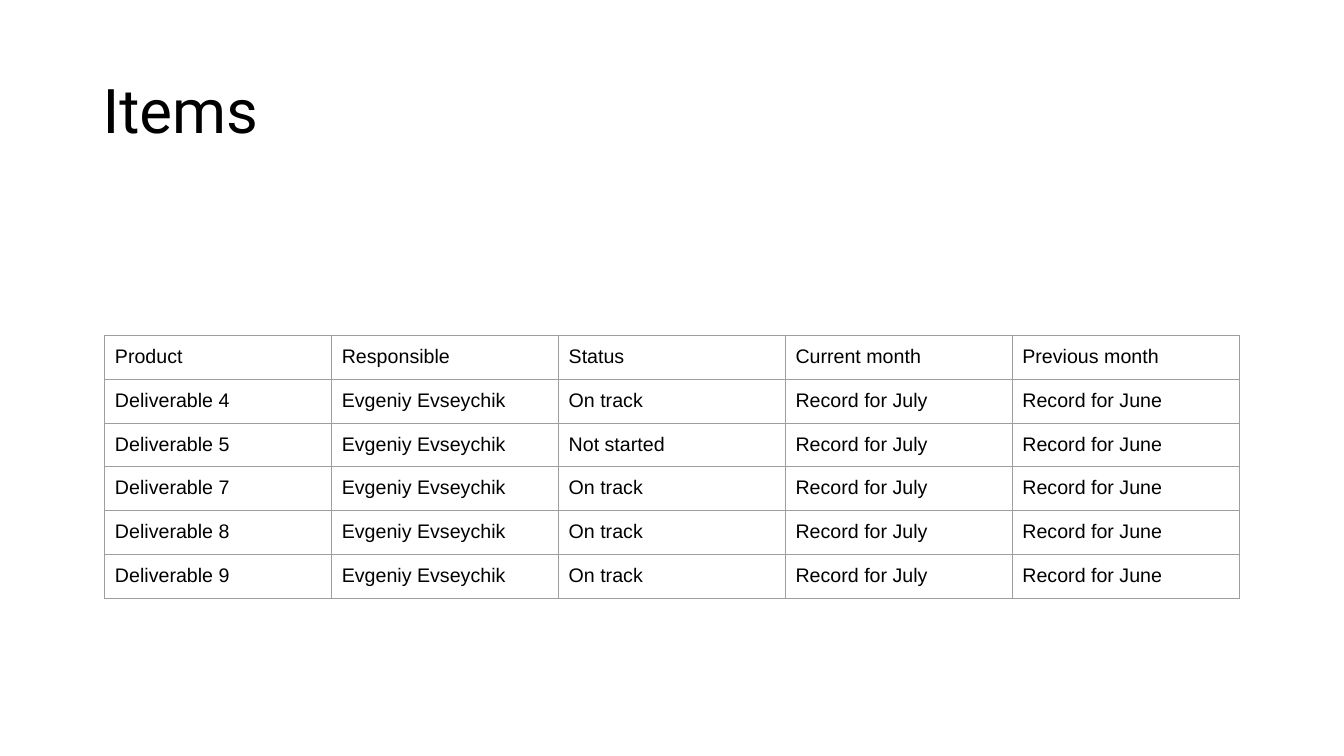
from lxml import etree
from pptx import Presentation
from pptx import util as u
from pptx.dml.color import RGBColor
from pptx.enum import text
from pptx.oxml.ns import qn

# Content
TITLE = "Items"
HEAD = ["Product", "Responsible", "Status", "Current month", "Previous month"]
OWNER = "Evgeniy Evseychik"
MONTHS = ["Record for July", "Record for June"]
ITEMS = [
    ("Deliverable 4", "On track"),
    ("Deliverable 5", "Not started"),
    ("Deliverable 7", "On track"),
    ("Deliverable 8", "On track"),
    ("Deliverable 9", "On track"),
]
ROWS = [HEAD] + [[name, OWNER, state] + MONTHS for name, state in ITEMS]

# Layout in inches, colours in hex
WIDE, HIGH = 13.33, 7.5
TITLE_BOX = (0.92, 0.4, 11.5, 1.45)
LEFT, TOP = 1.04, 3.33
COL, ROW = 2.25, 0.417
PAD = u.Inches(0.1)
COLORS = {"ink": "000000", "rule": "9E9E9E", "page": "FFFFFF"}


def write(frame, words, size, font, color="ink", space=1.0):
    """Put one line of formatted text into a text frame."""
    para = frame.paragraphs[0]
    para.alignment = text.PP_ALIGN.LEFT
    para.line_spacing = space
    run = para.add_run()
    run.text = words
    run.font.size = u.Pt(size)
    run.font.name = font
    run.font.color.rgb = RGBColor.from_string(COLORS[color])


def border(cell, color="rule", width=0.75):
    """Draw a line on all four sides of a cell."""
    props = cell._tc.get_or_add_tcPr()
    for side in ("lnL", "lnR", "lnT", "lnB"):
        line = etree.SubElement(props, qn(f"a:{side}"), w=str(u.Pt(width)))
        fill = etree.SubElement(line, qn("a:solidFill"))
        etree.SubElement(fill, qn("a:srgbClr"), val=COLORS[color])


def main():
    deck = Presentation()
    deck.slide_width, deck.slide_height = u.Inches(WIDE), u.Inches(HIGH)
    slide = deck.slides.add_slide(deck.slide_layouts[6])
    back = slide.background.fill
    back.solid()
    back.fore_color.rgb = RGBColor.from_string(COLORS["page"])

    # Title
    frame = slide.shapes.add_textbox(*map(u.Inches, TITLE_BOX)).text_frame
    frame.word_wrap = True
    frame.vertical_anchor = text.MSO_ANCHOR.MIDDLE
    write(frame, TITLE, 44, "Roboto", space=0.9)

    # Table of items
    size = (COL * len(HEAD), ROW * len(ROWS))
    table = slide.shapes.add_table(
        len(ROWS), len(HEAD), *map(u.Inches, (LEFT, TOP) + size)).table
    table.first_row = table.horz_banding = False
    for r, row in enumerate(ROWS):
        for c, words in enumerate(row):
            cell = table.cell(r, c)
            cell.margin_left = cell.margin_right = PAD
            cell.margin_top = cell.margin_bottom = PAD
            border(cell)
            cell.fill.background()
            write(cell.text_frame, words, 14, "Arial")

    deck.save("out.pptx")


if __name__ == "__main__":
    main()
